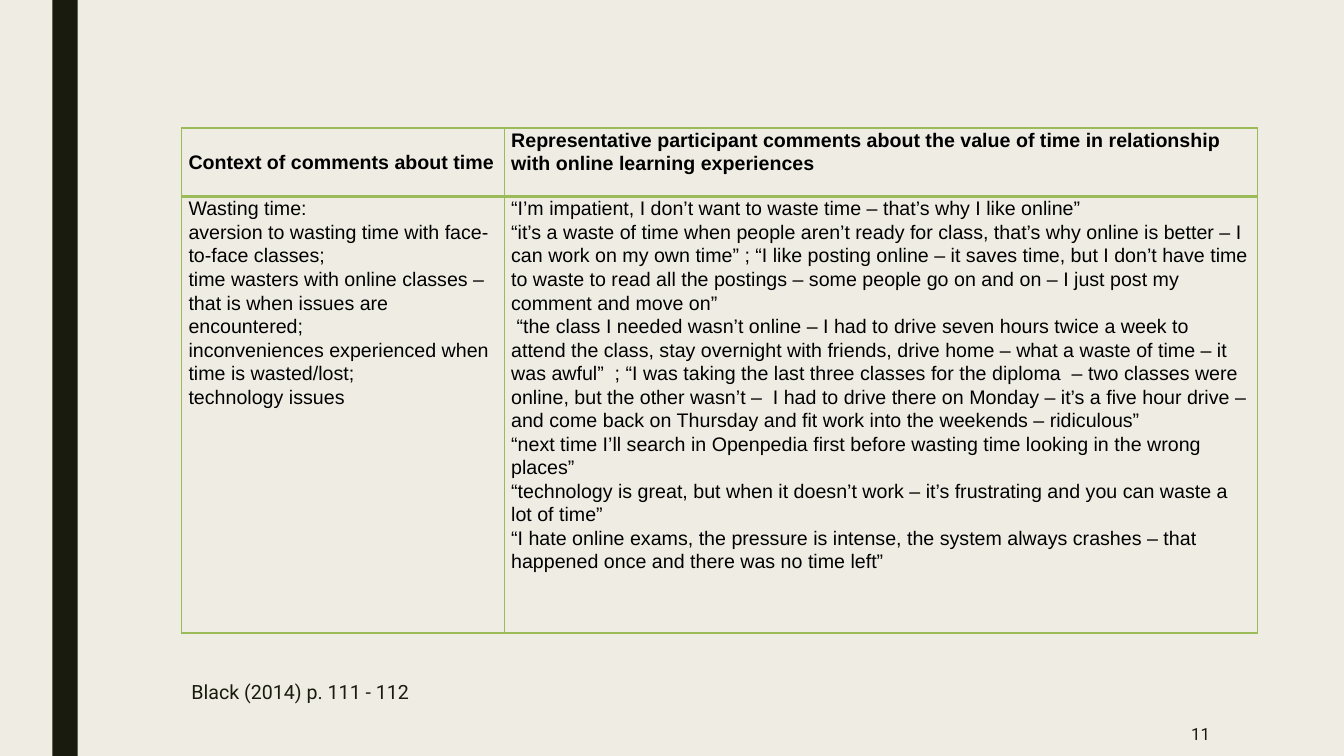
import dataclasses

import pptx
import pptx.dml.color
import pptx.enum.shapes
import pptx.enum.text
import pptx.oxml
import pptx.oxml.ns
import pptx.util
from pptx.util import Inches


@dataclasses.dataclass(frozen=True)
class Theme:
    background: str = "EFEDE3"
    dark: str = "191B0E"
    table_text: str = "000000"
    border: str = "9BBB59"
    table_font: str = "Arial"
    label_font: str = "Roboto"
    body_size: float = 14
    number_size: float = 12
    thin_line: float = 1
    thick_line: float = 2.25


THEME = Theme()

HEADERS = [
    "Context of comments about time",
    "Representative participant comments about the value of time in relationship "
    "with online learning experiences",
]
CONTEXTS = [
    "Wasting time:",
    "aversion to wasting time with face-to-face classes;",
    "time wasters with online classes – that is when issues are encountered;",
    "inconveniences experienced when time is wasted/lost;",
    "technology issues",
]
COMMENTS = [
    "“I’m impatient, I don’t want to waste time – that’s why I like online”",
    "“it’s a waste of time when people aren’t ready for class, that’s why online is "
    "better – I can work on my own time” ; “I like posting online – it saves time, but "
    "I don’t have time to waste to read all the postings – some people go on and on – "
    "I just post my comment and move on”",
    " “the class I needed wasn’t online – I had to drive seven hours twice a week to "
    "attend the class, stay overnight with friends, drive home – what a waste of time – "
    "it was awful”  ; “I was taking the last three classes for the diploma  – two classes "
    "were online, but the other wasn’t –  I had to drive there on Monday – it’s a five "
    "hour drive – and come back on Thursday and fit work into the weekends – ridiculous”",
    "“next time I’ll search in Openpedia first before wasting time looking in the wrong "
    "places”",
    "“technology is great, but when it doesn’t work – it’s frustrating and you can waste "
    "a lot of time”",
    "“I hate online exams, the pressure is intense, the system always crashes – that "
    "happened once and there was no time left”",
]


def rgb(color):
    return pptx.dml.color.RGBColor.from_string(color)


def write_text(text_frame, lines, *, font, size, color, bold=False, spacing=None, align=None):
    for index, line in enumerate(lines):
        paragraph = text_frame.paragraphs[0] if index == 0 else text_frame.add_paragraph()
        paragraph.line_spacing = spacing
        paragraph.alignment = align
        run = paragraph.add_run()
        run.text = line
        run.font.name = font
        run.font.size = pptx.util.Pt(size)
        run.font.bold = bold
        run.font.color.rgb = rgb(color)


def set_borders(cell, widths):
    properties = cell._tc.get_or_add_tcPr()
    for side in "LRTB":
        properties.append(pptx.oxml.parse_xml(
            f'<a:ln{side} {pptx.oxml.ns.nsdecls("a")} w="{pptx.util.Pt(widths[side])}">'
            f'<a:solidFill><a:srgbClr val="{THEME.border}"/></a:solidFill></a:ln{side}>'))


def add_sidebar(slide, left, top, width, height):
    sidebar = slide.shapes.add_shape(
        pptx.enum.shapes.MSO_SHAPE.RECTANGLE,
        Inches(left), Inches(top), Inches(width), Inches(height))
    sidebar.shadow.inherit = False
    sidebar.fill.solid()
    sidebar.fill.fore_color.rgb = rgb(THEME.dark)
    sidebar.line.fill.background()


def add_comment_table(slide, left, top, width, height):
    header_height, context_width = 0.68, 3.2
    rows = [[[header] for header in HEADERS], [CONTEXTS, COMMENTS]]
    frame = slide.shapes.add_table(
        2, 2, Inches(left), Inches(top), Inches(width), Inches(height))
    table = frame.table
    table.first_row = table.horz_banding = False
    for column, column_width in zip(table.columns, (context_width, width - context_width)):
        column.width = Inches(column_width)
    for row, row_height in zip(table.rows, (header_height, height - header_height)):
        row.height = Inches(row_height)

    for row_index, row in enumerate(rows):
        is_header = row_index == 0
        for column_index, lines in enumerate(row):
            cell = table.cell(row_index, column_index)
            cell.margin_left, cell.margin_right = Inches(0.07), Inches(0.08)
            cell.margin_top = cell.margin_bottom = 0
            widths = dict.fromkeys("LRTB", THEME.thin_line)
            widths["B" if is_header else "T"] = THEME.thick_line
            set_borders(cell, widths)
            cell.fill.background()
            write_text(cell.text_frame, lines, font=THEME.table_font, size=THEME.body_size,
                       color=THEME.table_text, bold=is_header, spacing=1.07)
    table.cell(0, 0).vertical_anchor = pptx.enum.text.MSO_ANCHOR.MIDDLE


def add_label(slide, text, left, top, width, height, *, size, align=None):
    label = slide.shapes.add_textbox(
        Inches(left), Inches(top), Inches(width), Inches(height))
    label.text_frame.word_wrap = True
    label.text_frame.vertical_anchor = pptx.enum.text.MSO_ANCHOR.MIDDLE
    write_text(label.text_frame, [text], font=THEME.label_font, size=size,
               color=THEME.dark, align=align)


def build_table_slide(presentation):
    slide = presentation.slides.add_slide(presentation.slide_layouts[6])
    slide.background.fill.solid()
    slide.background.fill.fore_color.rgb = rgb(THEME.background)

    # Dark band down the left edge
    add_sidebar(slide, 0.52, 0, 0.25, 7.5)
    # Contexts and participant comments
    add_comment_table(slide, 1.8, 1.27, 10.67, 5.01)
    # Citation and slide number
    add_label(slide, "Black (2014) p. 111 - 112", 1.8, 6.64, 6.87, 0.44,
              size=THEME.body_size)
    add_label(slide, "11", 10.35, 7.06, 1.75, 0.44,
              size=THEME.number_size, align=pptx.enum.text.PP_ALIGN.RIGHT)


def main():
    presentation = pptx.Presentation()
    presentation.slide_width = Inches(13.33)
    presentation.slide_height = Inches(7.5)
    build_table_slide(presentation)
    presentation.save("out.pptx")


if __name__ == "__main__":
    main()
